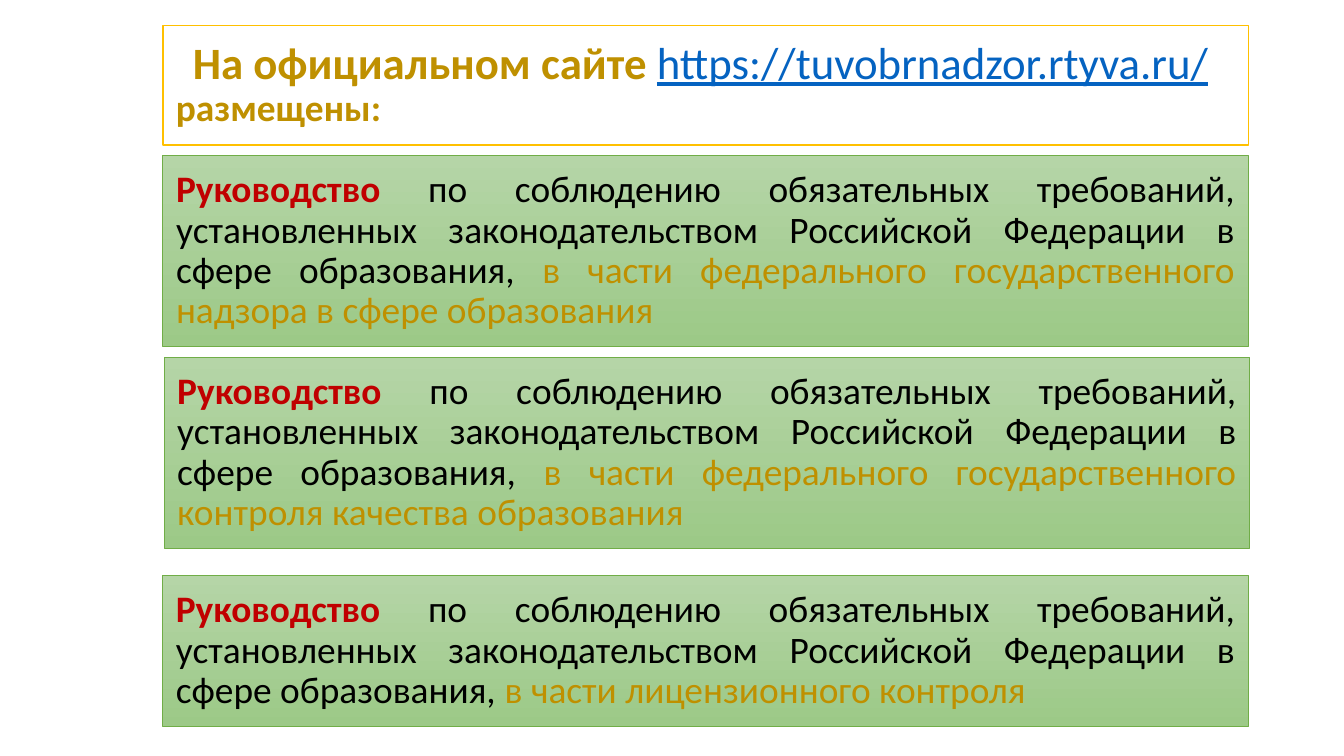
from pptx import Presentation
from pptx.dml.color import RGBColor
from pptx.enum.shapes import MSO_SHAPE
from pptx.enum.text import MSO_ANCHOR, MSO_AUTO_SIZE, PP_ALIGN
from pptx.util import Inches, Pt

WHITE = RGBColor(0xFF, 0xFF, 0xFF)
BLACK = RGBColor(0x00, 0x00, 0x00)
RED = RGBColor(0xC0, 0x00, 0x00)
GOLD = RGBColor(0xBF, 0x90, 0x00)
AMBER = RGBColor(0xFF, 0xC0, 0x00)
BLUE = RGBColor(0x05, 0x63, 0xC1)
GREEN = RGBColor(0x70, 0xAD, 0x47)
LIGHT = RGBColor(0xB5, 0xD5, 0xA7)
DARK = RGBColor(0x9C, 0xC9, 0x87)

RULES = ("по соблюдению обязательных требований, установленных "
         "законодательством Российской Федерации в сфере образования, ")


def add_text(para, text, size=20, color=BLACK, bold=False, line=False):
    run = para.add_run()
    run.text = text
    font = run.font
    font.name = "Calibri"
    font.size = Pt(size)
    font.color.rgb = color
    font.bold = bold
    font.underline = line


class Deck:
    left, width = 1.21, 8.08

    def __init__(self):
        self.prs = Presentation()
        # Widescreen, 16 to 9
        self.prs.slide_width = Inches(10)
        self.prs.slide_height = Inches(10 * 9 / 16)
        self.slide = self.prs.slides.add_slide(self.prs.slide_layouts[5])

    def place(self, shape, left, top, height):
        shape.left, shape.top = Inches(left), Inches(top)
        shape.width, shape.height = Inches(self.width), Inches(height)
        shape.shadow.inherit = False
        frame = shape.text_frame
        frame.word_wrap = True
        frame.auto_size = MSO_AUTO_SIZE.NONE
        frame.vertical_anchor = MSO_ANCHOR.MIDDLE

    def rect(self):
        return self.slide.shapes.add_shape(MSO_SHAPE.RECTANGLE, 0, 0, 0, 0)

    def format(self, para, align):
        para.alignment = align
        para.line_spacing = 0.9
        return para

    def header(self, top, height):
        box = self.rect()
        self.place(box, self.left, top, height)
        box.fill.solid()
        box.fill.fore_color.rgb = WHITE
        box.line.color.rgb = AMBER
        box.line.width = Pt(1)
        frame = box.text_frame
        para = self.format(frame.paragraphs[0], PP_ALIGN.CENTER)
        add_text(para, "На официальном сайте ", size=24, color=GOLD, bold=True)
        add_text(para, "https://tuvobrnadzor.rtyva.ru/", size=24, color=BLUE, line=True)
        add_text(para, " ", size=24, color=GOLD)
        para = self.format(frame.add_paragraph(), PP_ALIGN.LEFT)
        add_text(para, "размещены:", color=GOLD, bold=True)

    def guide(self, box, topic, top, height, left=left):
        self.place(box, left, top, height)
        box.fill.gradient()
        box.fill.gradient_angle = 270
        for stop, color in zip(box.fill.gradient_stops, (LIGHT, DARK)):
            stop.color.rgb = color
        box.line.color.rgb = GREEN
        box.line.width = Pt(0.5)
        para = self.format(box.text_frame.paragraphs[0], PP_ALIGN.JUSTIFY)
        add_text(para, "Руководство ", color=RED, bold=True)
        add_text(para, RULES)
        add_text(para, "в части " + topic, color=GOLD)


def main():
    deck = Deck()
    # First guide sits in the title placeholder
    deck.guide(deck.slide.shapes.title,
               "федерального государственного надзора в сфере образования", 1.16, 1.42)
    # Site address
    deck.header(0.19, 0.89)
    # Other guides
    deck.guide(deck.rect(),
               "федерального государственного контроля качества образования",
               2.66, 1.42, left=1.22)
    deck.guide(deck.rect(), "лицензионного контроля", 4.28, 1.13)
    deck.prs.save("out.pptx")


if __name__ == "__main__":
    main()
